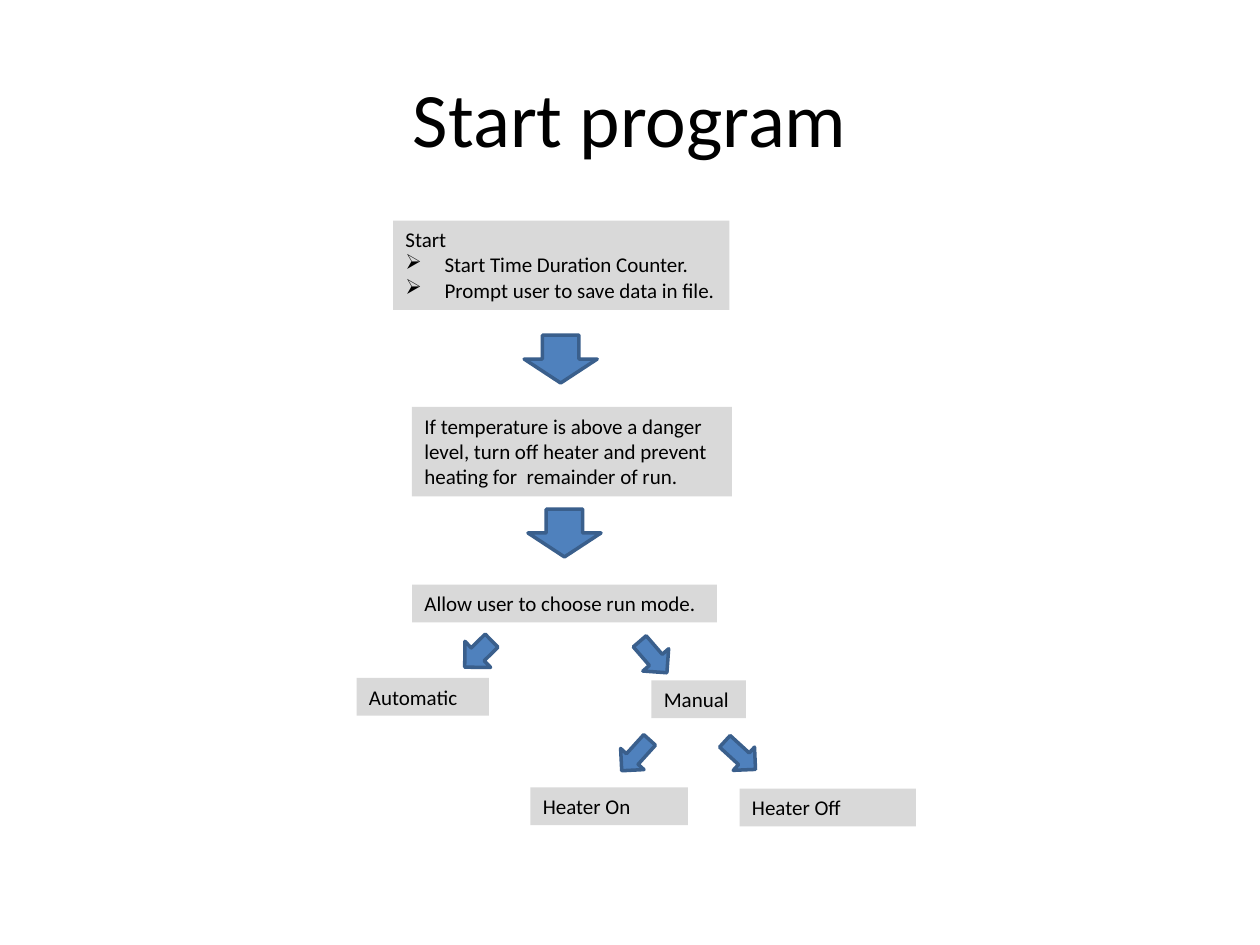
"""Build the start-program flowchart slide."""
from lxml import etree
from pptx import Presentation
from pptx import util as u
from pptx.dml.color import RGBColor
from pptx.enum import shapes, text
from pptx.oxml.ns import qn

FONT = "Calibri"
DOWN = shapes.MSO_SHAPE.DOWN_ARROW
RIGHT = shapes.MSO_SHAPE.RIGHT_ARROW

STEPS = [
    (3.12, 1.75, 2.67, 0.71, "Start",
     ["Start Time Duration Counter.", "Prompt user to save data in file."]),
    (3.27, 3.23, 2.54, 0.71,
     "If temperature is above a danger level, turn off heater and prevent "
     "heating for  remainder of run.", []),
    (3.27, 4.64, 2.42, 0.3, "Allow user to choose run mode.", []),
    (2.83, 5.38, 1.05, 0.3, "Automatic", []),
    (5.17, 5.4, 0.75, 0.3, "Manual", []),
    (4.21, 6.25, 1.25, 0.3, "Heater On", []),
    (5.87, 6.26, 1.4, 0.3, "Heater Off", []),
]
ARROWS = [
    (DOWN, 4.16, 2.66, 0.58, 0.38, 0),
    (DOWN, 4.19, 4.04, 0.58, 0.38, 0),
    (DOWN, 3.65, 5.04, 0.29, 0.3, 45.3),
    (RIGHT, 5.02, 5.08, 0.33, 0.27, 49.1),
    (DOWN, 5.75, 5.83, 0.25, 0.33, 312.5),
    (DOWN, 4.92, 5.83, 0.25, 0.33, 42.1),
]


def color(value):
    """Return the colour for a hex string."""
    return RGBColor.from_string(value)


def inches(*lengths):
    """Convert several lengths to inches."""
    return [u.Inches(length) for length in lengths]


def fill_shape(shape, value):
    """Give a shape a solid fill."""
    shape.fill.solid()
    shape.fill.fore_color.rgb = color(value)


def format_font(paragraph, size):
    """Apply the slide's typeface and text colour to a paragraph."""
    values = {"name": FONT, "size": u.Pt(size)}
    for name, value in values.items():
        setattr(paragraph.font, name, value)
    paragraph.font.color.rgb = color("000000")


def add_bullet(paragraph):
    """Give a paragraph an arrowhead bullet with a hanging indent."""
    properties = paragraph._p.get_or_add_pPr()
    indent = u.Inches(0.31)
    properties.set("marL", str(indent))
    properties.set("indent", str(-indent))
    etree.SubElement(properties, qn("a:buChar")).set("char", "➢")


def set_title(slide, wording):
    """Place and format the title placeholder."""
    title = slide.shapes.title
    places = zip(("left", "top", "width", "height"), inches(0.5, 0.3, 9, 1.25))
    for name, value in places:
        setattr(title, name, value)
    title.text_frame.text = wording
    title.text_frame.vertical_anchor = text.MSO_ANCHOR.MIDDLE
    paragraph = title.text_frame.paragraphs[0]
    paragraph.alignment = text.PP_ALIGN.CENTER
    format_font(paragraph, 44)


def add_step(slide, left, top, width, height, heading, items):
    """Add a grey step box with a heading and optional bulleted items."""
    shape = slide.shapes.add_textbox(*inches(left, top, width, height))
    fill_shape(shape, "D9D9D9")
    frame = shape.text_frame
    frame.word_wrap = True
    frame.auto_size = text.MSO_AUTO_SIZE.SHAPE_TO_FIT_TEXT
    frame.text = heading
    format_font(frame.paragraphs[0], 12)
    for item in items:
        paragraph = frame.add_paragraph()
        paragraph.text = item
        add_bullet(paragraph)
        format_font(paragraph, 12)


def add_arrow(slide, kind, left, top, width, height, rotation):
    """Add a blue block arrow."""
    shape = slide.shapes.add_shape(kind, *inches(left, top, width, height))
    fill_shape(shape, "4F81BD")
    shape.line.color.rgb = color("3A5F8C")
    shape.line.width = u.Pt(2)
    shape.rotation = rotation
    shape.shadow.inherit = False


def main():
    """Build and save the presentation."""
    presentation = Presentation()
    presentation.slide_width, presentation.slide_height = inches(10, 7.5)
    slide = presentation.slides.add_slide(presentation.slide_layouts[5])
    set_title(slide, "Start program")
    for step in STEPS:
        add_step(slide, *step)
    for arrow in ARROWS:
        add_arrow(slide, *arrow)
    presentation.save("out.pptx")


if __name__ == "__main__":
    main()
